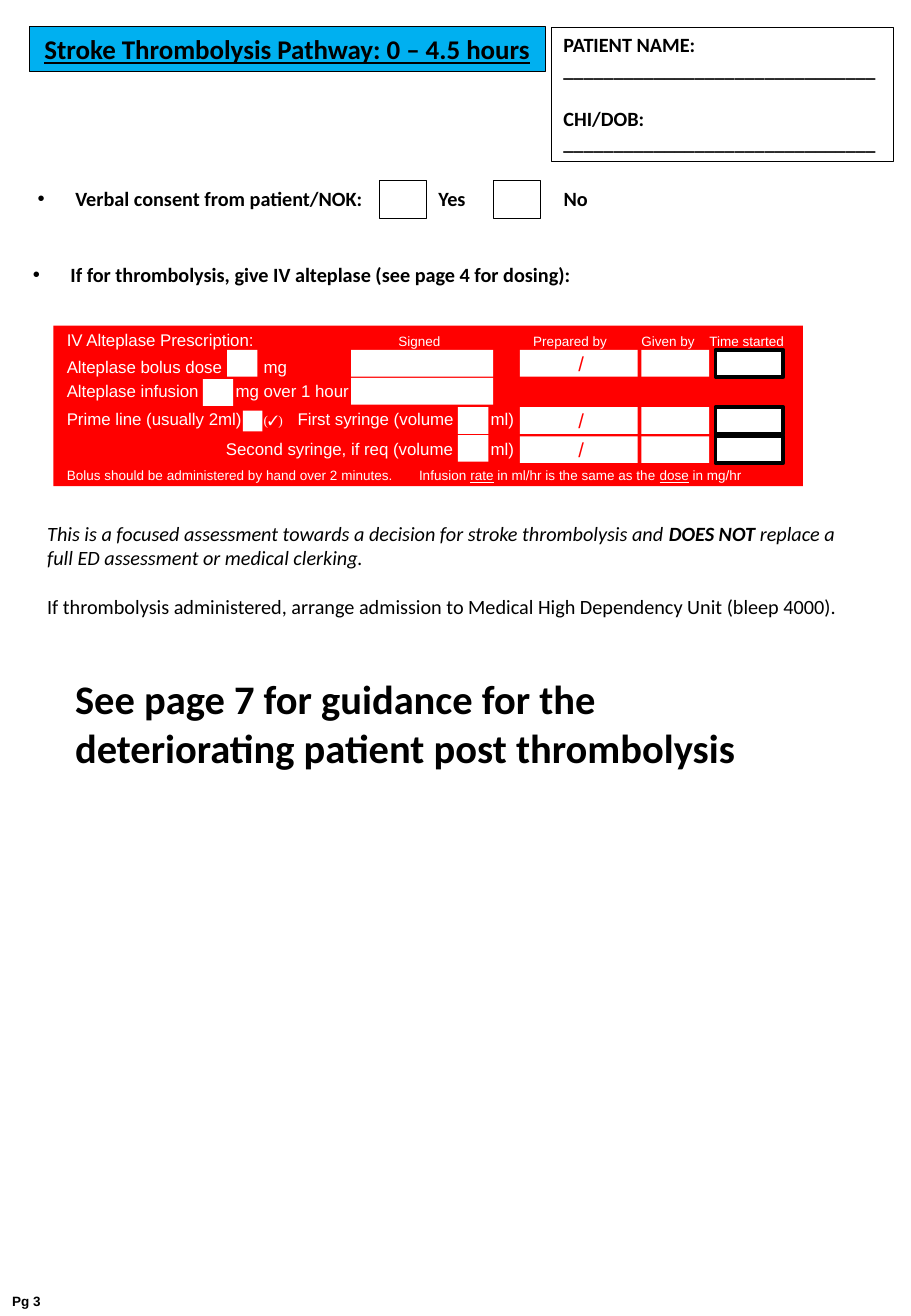
from pptx import Presentation
from pptx.dml.color import RGBColor
from pptx.enum.shapes import MSO_SHAPE as Shape
from pptx.enum.text import MSO_ANCHOR as Anchor, MSO_AUTO_SIZE as AutoSize, PP_ALIGN as Align
from pptx.util import Inches, Pt

BLACK = RGBColor(0x00, 0x00, 0x00)
WHITE = RGBColor(0xFF, 0xFF, 0xFF)
RED = RGBColor(0xFF, 0x00, 0x00)
BLUE = RGBColor(0x00, 0xB0, 0xF0)

CELL = Inches(0.1)  # the page grid has 75 columns and 108.3 rows
COLUMNS, ROWS = 75, 108.3
BLANK_LINE = 14.65  # points, one line of 12 pt Calibri

ANSWERS = [(31.2, "Yes", 36.1), (40.6, "No", 46.4)]

BOX_HEIGHT = 2.2
RECORD_ROWS = [28.8, 33.5, 35.9]
RECORD_COLUMNS = [(42.8, 9.7, None), (52.8, 5.6, None), (58.9, 5.6, 2.25)]
SIGNATURE_ROWS = [28.8, 31.1]
DOSE_BOXES = [(18.7, 28.8), (16.7, 31.2), (37.7, 33.5), (37.7, 35.8)]

# text, left, middle row, width
PRESCRIPTION_LABELS = [
    ("IV Alteplase Prescription:", 5.5, 28, 20),
    ("Alteplase bolus dose", 5.5, 30.2, 15),
    ("mg", 21.7, 30.2, 4),
    ("Alteplase infusion", 5.5, 32.2, 13),
    ("mg over 1 hour", 19.4, 32.2, 11),
    ("Prime line (usually 2ml)", 5.5, 34.5, 16),
    ("First syringe (volume", 24.5, 34.5, 15),
    ("ml)", 40.4, 34.5, 3),
    ("Second syringe, if req (volume", 18.6, 36.9, 21),
    ("ml)", 40.4, 36.9, 3),
]
SMALL_LABELS = [
    ("Signed", 32.8, 28.1, 6),
    ("Prepared by", 43.9, 28.1, 8),
    ("Given by", 52.8, 28.1, 6),
    ("Time started", 58.4, 28.1, 8),
    ("Bolus should be administered by hand over 2 minutes.", 5.5, 39.1, 29),
    ([("Infusion ", {}), ("rate", {"underline": True}),
      (" in ml/hr is the same as the ", {}), ("dose", {"underline": True}),
      (" in mg/hr", {})], 34.5, 39.1, 30),
]


def grid(*cells):
    return [round(cell * CELL) for cell in cells]


def move(part, *cells):
    part.left, part.top, part.width, part.height = grid(*cells)


def write(part, paragraphs, align=Align.LEFT, anchor=Anchor.TOP, margin=None,
          gap=0, color=BLACK, font="Calibri", size=12, **style):
    """Fill a shape; a paragraph is a string or a list of (text, run style)."""
    frame = part.text_frame
    frame.word_wrap = True
    frame.auto_size = AutoSize.NONE
    frame.vertical_anchor = anchor
    if margin is not None:
        frame.margin_left = frame.margin_right = margin
        frame.margin_top = frame.margin_bottom = margin
    for index, content in enumerate(paragraphs):
        line = frame.paragraphs[0] if index == 0 else frame.add_paragraph()
        line.alignment = align
        line.space_before = Pt(gap if index else 0)
        for text, run_style in [(content, {})] if isinstance(content, str) else content:
            run = line.add_run()
            run.text = text
            run.font.name, run.font.size = font, Pt(size)
            run.font.color.rgb = color
            for name, value in {**style, **run_style}.items():
                setattr(run.font, name, value)


def paint(part, fill=None, line=None):
    if fill is None:
        part.fill.background()
    else:
        part.fill.solid()
        part.fill.fore_color.rgb = fill
    if line is None:
        part.line.fill.background()
    else:
        part.line.color.rgb = BLACK
        part.line.width = Pt(line)


def box(shapes, *cells, fill=None, line=None):
    rectangle = shapes.add_shape(Shape.RECTANGLE, *grid(*cells))
    rectangle.shadow.inherit = False
    paint(rectangle, fill, line)
    return rectangle


def passage(shapes, paragraphs, *cells, **style):
    write(shapes.add_textbox(*grid(*cells)), paragraphs, **style)


def label(shapes, text, left, middle, width, **style):
    """One line of text centred vertically on a grid row."""
    passage(shapes, [text], left, middle - 1, width, 2,
            anchor=Anchor.MIDDLE, margin=0, **style)


def heading(slide):
    title = slide.shapes.title
    move(title, 2.4, 2.2, 42.5, 3.7)
    paint(title, BLUE, 0.75)
    write(title, ["Stroke Thrombolysis Pathway: 0 – 4.5 hours"], align=Align.CENTER,
          anchor=Anchor.MIDDLE, margin=Inches(0.05), size=16, bold=True, underline=True)

    rule = "_" * 31
    patient = box(slide.shapes, 45.4, 2.2, 28.1, 11.1, line=0.25)
    write(patient, [f"PATIENT NAME: {rule}", "CHI/DOB:", rule], bold=True)
    patient.text_frame.paragraphs[1].space_before = Pt(BLANK_LINE)


def checklist(slide):
    steps = slide.placeholders[1]
    move(steps, 1.7, 14.8, 73.3, 9.3)
    write(steps, ["Verbal consent from patient/NOK:",
                  "If for thrombolysis, give IV alteplase (see page 4 for dosing):"],
          gap=31, bold=True)
    for step, indent in zip(steps.text_frame.paragraphs, (0.35, 0.31)):
        properties = step._p.get_or_add_pPr()
        properties.set("marL", str(Inches(indent)))
        properties.set("indent", str(-Inches(0.31)))
    for box_left, answer, text_left in ANSWERS:
        box(slide.shapes, box_left, 14.8, 3.9, 3.2, line=0.25)
        label(slide.shapes, answer, text_left, 16.3, 4, bold=True)


def prescription(slide):
    panel = slide.shapes.add_group_shape().shapes
    box(panel, 4.4, 26.8, 61.7, 13.2, fill=RED)
    for left, top in DOSE_BOXES:
        box(panel, left, top, 2.5, BOX_HEIGHT, fill=WHITE)
    box(panel, 20, 33.8, 1.6, 1.7, fill=WHITE)
    for top in SIGNATURE_ROWS:
        box(panel, 28.9, top, 11.7, BOX_HEIGHT, fill=WHITE)
    for top in RECORD_ROWS:
        for left, width, line in RECORD_COLUMNS:
            box(panel, left, top, width, BOX_HEIGHT, fill=WHITE, line=line)
        label(panel, "/", 46.6, top + BOX_HEIGHT / 2, 2.5, align=Align.CENTER,
              font="Arial", color=RED)
    for entry in PRESCRIPTION_LABELS:
        label(panel, *entry, font="Arial", size=10, color=WHITE)
    for entry in SMALL_LABELS:
        label(panel, *entry, font="Arial", size=8, color=WHITE)
    label(panel, "(✓)", 21.7, 34.6, 2.4, font="Times New Roman", size=8, color=WHITE)


def guidance(slide):
    passage(slide.shapes, [
        [("This is a focused assessment towards a decision for stroke thrombolysis and ",
          {"italic": True}),
         ("DOES NOT ", {"italic": True, "bold": True}),
         ("replace a full ED assessment or medical clerking.", {"italic": True})],
        "If thrombolysis administered, arrange admission to Medical High Dependency Unit "
        "(bleep 4000).",
    ], 2.9, 42.4, 69.3, 9.1, gap=BLANK_LINE)
    passage(slide.shapes,
            ["See page 7 for guidance for the deteriorating patient post thrombolysis"],
            5.2, 55, 60.6, 9.1, size=24, bold=True)
    label(slide.shapes, "Pg 3", 1, 107.1, 4, font="Arial", size=8, bold=True)


def main():
    deck = Presentation()
    deck.slide_width, deck.slide_height = grid(COLUMNS, ROWS)
    slide = deck.slides.add_slide(deck.slide_layouts[1])
    heading(slide)
    checklist(slide)
    prescription(slide)
    guidance(slide)
    deck.save("out.pptx")


if __name__ == "__main__":
    main()
